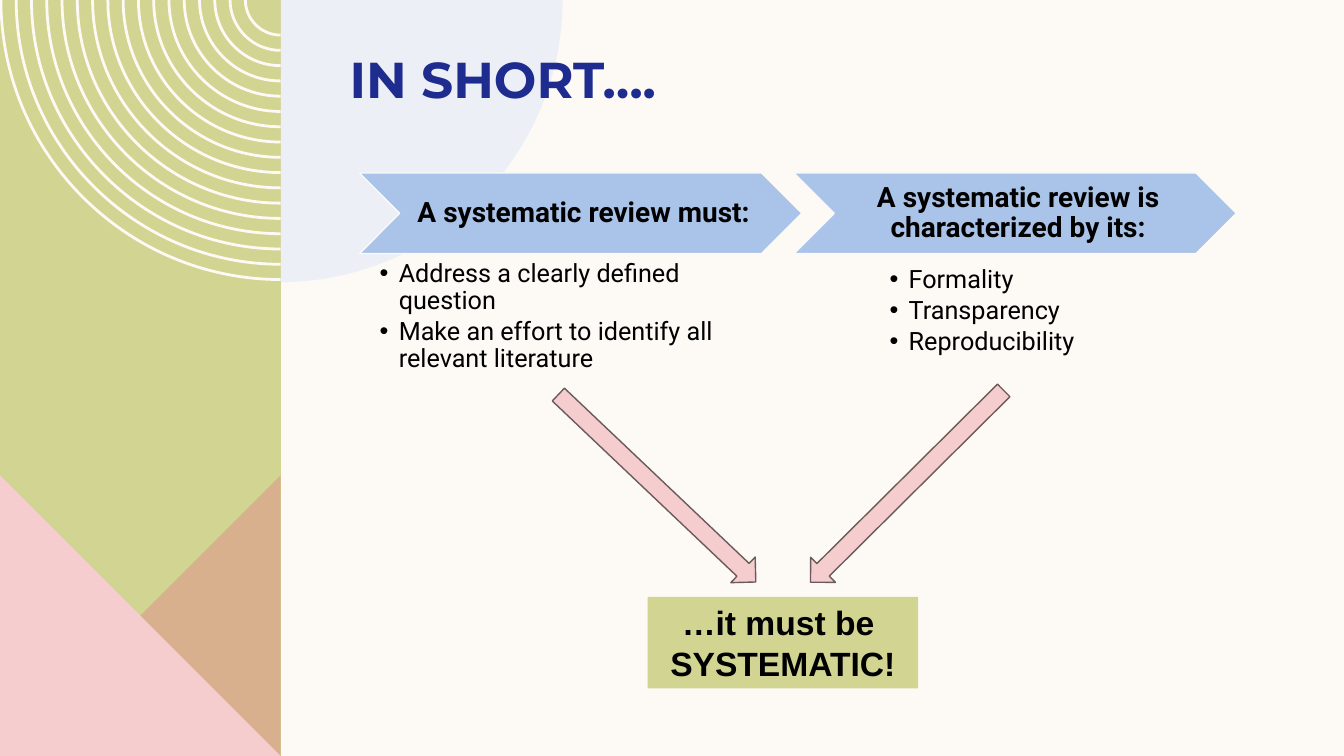
from lxml.etree import SubElement
from pptx import Presentation
from pptx.dml.color import RGBColor
from pptx.enum.shapes import MSO_SHAPE as Preset
from pptx.enum.text import MSO_ANCHOR as Anchor, MSO_AUTO_SIZE as AutoSize, PP_ALIGN as Align
from pptx.oxml.ns import qn
from pptx.util import Cm, Pt

COLORS = {
    "cream": "FDFAF6", "green": "D2D592", "rose": "DE8C8C", "pink": "F5CDCE",
    "mist": "DDE7F6", "blue": "AAC3E8", "navy": "1F2C8F", "brown": "6B5A5A", "black": "000000",
}
FORMATS = {
    "title": {
        "font": {"name": "Montserrat", "size": Pt(36), "bold": True},
        "paragraph": {"alignment": Align.LEFT, "line_spacing": 0.9},
        "frame": {"vertical_anchor": Anchor.BOTTOM, "margin_left": Cm(0.25), "margin_right": Cm(0.25),
                  "margin_top": 0, "margin_bottom": 0},
        "color": "navy",
    },
    "heading": {
        "font": {"name": "Roboto", "size": Pt(20), "bold": True},
        "paragraph": {"alignment": Align.CENTER, "line_spacing": 0.9},
        "frame": {"vertical_anchor": Anchor.MIDDLE, "margin_left": Cm(0.23), "margin_right": Cm(0.08),
                  "margin_top": Cm(0.08), "margin_bottom": Cm(0.08)},
        "color": "black",
    },
    "list": {
        "font": {"name": "Roboto", "size": Pt(18), "bold": False},
        "paragraph": {"alignment": Align.LEFT, "line_spacing": 0.9, "space_before": 0, "space_after": Pt(2.7)},
        "frame": {"vertical_anchor": Anchor.TOP, "margin_left": 0, "margin_right": 0,
                  "margin_top": 0, "margin_bottom": 0},
        "color": "black",
    },
    "conclusion": {
        "font": {"name": "Arial", "size": Pt(24), "bold": True},
        "paragraph": {"alignment": Align.CENTER},
        "frame": {"vertical_anchor": Anchor.MIDDLE},
        "color": "black",
    },
}


def write(holder, lines, kind):
    frame, look = holder.text_frame, FORMATS[kind]
    frame.text = "\n".join(lines)
    frame.word_wrap = True
    frame.auto_size = AutoSize.NONE
    targets = [(frame, look["frame"])]
    for paragraph in frame.paragraphs:
        targets.append((paragraph, look["paragraph"]))
        for run in paragraph.runs:
            targets.append((run.font, look["font"]))
            run.font.color.rgb = RGBColor.from_string(COLORS[look["color"]])
    for target, values in targets:
        for attribute, value in values.items():
            setattr(target, attribute, value)


def paint(shape, fill, line=None, opacity=None):
    shape.shadow.inherit = False
    shape.fill.solid()
    shape.fill.fore_color.rgb = RGBColor.from_string(COLORS[fill])
    shape.line.fill.background()
    if line:
        shape.line.fill.solid()
        shape.line.fill.fore_color.rgb = RGBColor.from_string(COLORS[line])
        shape.line.width = Pt(1)
    if opacity:
        fill_color = shape.element.spPr.find(qn("a:solidFill"))[0]
        SubElement(fill_color, qn("a:alpha"), val=str(opacity * 1000))


deck = Presentation()
deck.slide_width, deck.slide_height = Cm(33.87), Cm(19.05)
slide = deck.slides.add_slide(deck.slide_layouts[3])
shapes = slide.shapes
slide.background.fill.solid()
slide.background.fill.fore_color.rgb = RGBColor.from_string(COLORS["cream"])

BAND, BOTTOM = 7.07, 19.05
CORNER = BOTTOM - BAND
BEND = 0.55

rings = []
for number in range(17):
    outer = 0.92 + 0.385 * number
    inner = outer - 0.07
    rings.append([
        (BAND - outer, 0), (BAND - inner, 0),
        (BAND - inner, BEND * inner), (BAND - BEND * inner, inner), (BAND, inner),
        (BAND, outer),
        (BAND - BEND * outer, outer), (BAND - outer, BEND * outer), (BAND - outer, 0),
    ])
DISC = 7.11
disc = [(BAND, 0), (BAND, DISC), (BAND + BEND * DISC, DISC), (BAND + DISC, BEND * DISC), (BAND + DISC, 0)]
side_band = [(0, 0), (BAND, 0), (BAND, BOTTOM), (0, BOTTOM)]
tan_corner = [(BAND, CORNER), (BAND, BOTTOM), (0, BOTTOM)]
pink_corner = [(0, CORNER), (BAND, BOTTOM), (0, BOTTOM)]

for outlines, color, opacity, curved in (
    ([side_band], "green", None, False),
    (rings, "cream", None, True),
    ([tan_corner], "rose", 50, False),
    ([pink_corner], "pink", None, False),
    ([disc], "mist", 50, True),
):
    builder = None
    for outline in outlines:
        start, *rest = [(Cm(x), Cm(y)) for x, y in outline]
        if builder is None:
            builder = shapes.build_freeform(*start)
        else:
            builder.move_to(*start)
        builder.add_line_segments(rest)
    decoration = builder.convert_to_shape()
    paint(decoration, color, opacity=opacity)
    if curved:
        segments = list(decoration.element.iter(qn("a:lnTo")))
        for first in range(1, len(segments), 4):
            curve, *others = segments[first:first + 3]
            curve.tag = qn("a:cubicBezTo")
            for segment in others:
                curve.append(segment[0])
                segment.getparent().remove(segment)

title, must_list, traits_list = slide.placeholders
columns = [
    (9.06, "A systematic review must:", must_list, (9.57, 6.57, 9.73, 2.8),
     ["Address a clearly defined question", "Make an effort to identify all relevant literature"]),
    (20.01, "A systematic review is characterized by its:", traits_list, (22.42, 6.71, 7.14, 2.4),
     ["Formality", "Transparency", "Reproducibility"]),
]

title.left, title.top, title.width, title.height = Cm(8.56), Cm(0), Cm(24.26), Cm(2.77)
write(title, ["IN SHORT…."], "title")
title.element.getparent().append(title.element)

for left, heading, points_list, box, points in columns:
    chevron = shapes.add_shape(Preset.CHEVRON, Cm(left), Cm(4.36), Cm(11.15), Cm(2.03))
    paint(chevron, "blue", "cream")
    write(chevron, [heading], "heading")

    points_list.left, points_list.top, points_list.width, points_list.height = map(Cm, box)
    write(points_list, points, "list")
    for paragraph in points_list.text_frame.paragraphs:
        properties = paragraph._p.get_or_add_pPr()
        properties.set("marL", str(Cm(0.48)))
        properties.set("indent", str(-Cm(0.48)))
    points_list.element.getparent().append(points_list.element)

conclusion = shapes.add_shape(Preset.RECTANGLE, Cm(16.32), Cm(15.04), Cm(6.82), Cm(2.31))
paint(conclusion, "green")
write(conclusion, ["…it must be ", "SYSTEMATIC!"], "conclusion")

for left, top, angle in ((13.13, 11.86, 43.5), (19.43, 11.81, 135.2)):
    arrow = shapes.add_shape(Preset.RIGHT_ARROW, Cm(left), Cm(top), Cm(6.86), Cm(0.89))
    arrow.rotation = angle
    paint(arrow, "pink", "brown")

deck.save("out.pptx")
